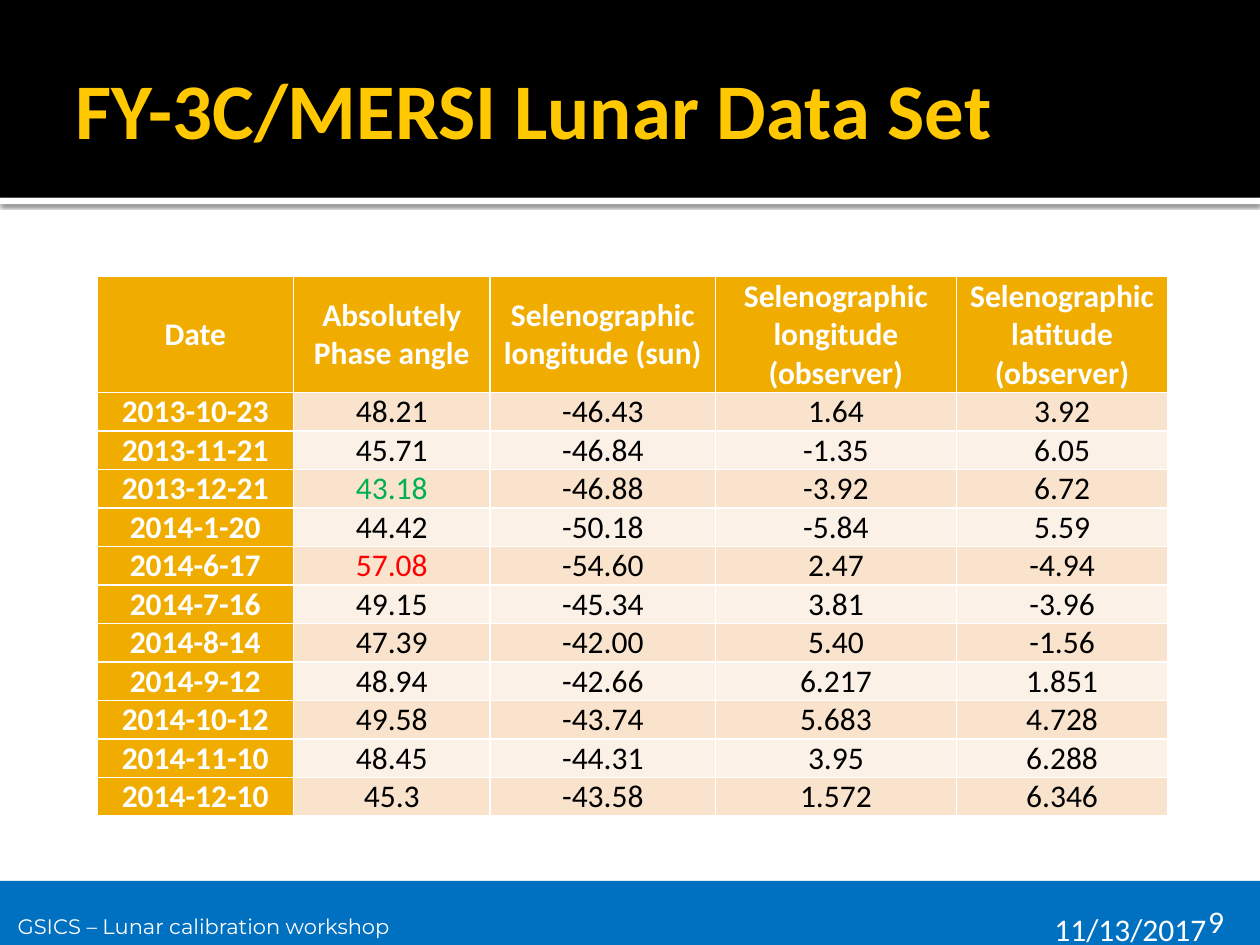
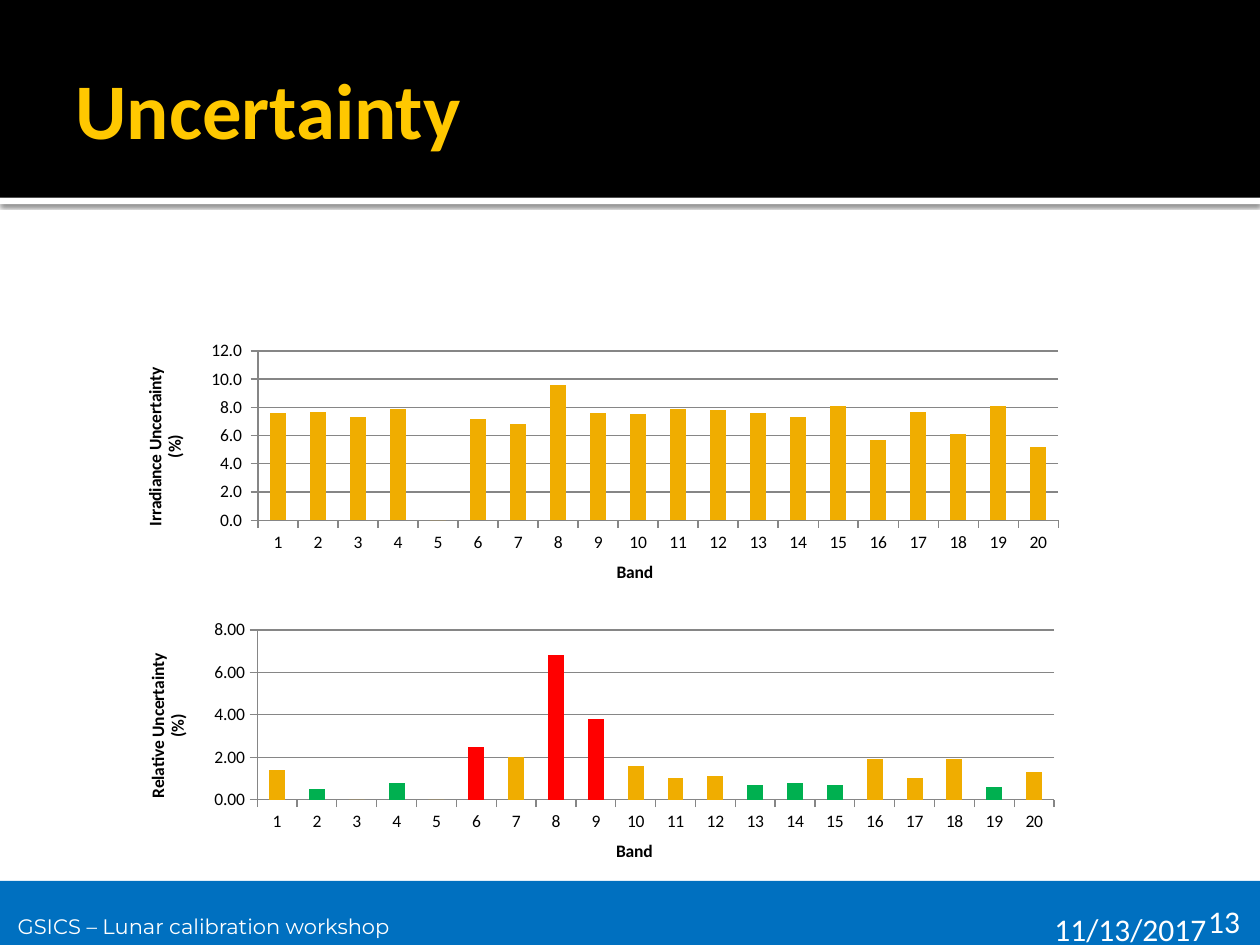
"""Build the lunar data set and uncertainty slides of a calibration workshop deck."""
from pptx import Presentation
from pptx import util as u
from pptx.chart import data as chart_data
from pptx.dml.color import RGBColor
from pptx.enum import chart as charts, shapes, text
from pptx.oxml import parse_xml
from pptx.oxml.ns import nsdecls

COLUMNS, ROWS = 100, 75
CELL = u.Inches(0.1)

BLACK = RGBColor(0x00, 0x00, 0x00)
WHITE = RGBColor(0xFF, 0xFF, 0xFF)
BLUE = RGBColor(0x00, 0x70, 0xC0)
YELLOW = RGBColor(0xFF, 0xC8, 0x00)
AMBER = RGBColor(0xF0, 0xAD, 0x00)
GREEN = RGBColor(0x00, 0xB0, 0x50)
RED = RGBColor(0xFF, 0x00, 0x00)
GREY = RGBColor(0x86, 0x86, 0x86)
BANDS = (RGBColor(0xF9, 0xE3, 0xCC), RGBColor(0xFC, 0xF1, 0xE7))

BODY_FONT = "Calibri"
FOOTER_FONT = "Montserrat"
WORKSHOP = "GSICS – Lunar calibration workshop"
DATE = "11/13/2017"

LUNAR_HEADER = ("Date", "Absolutely Phase angle", "Selenographic longitude (sun)",
                "Selenographic longitude (observer)", "Selenographic latitude (observer)")
LUNAR_ROWS = (
    ("2013-10-23", "48.21", "-46.43", "1.64", "3.92"),
    ("2013-11-21", "45.71", "-46.84", "-1.35", "6.05"),
    ("2013-12-21", "43.18", "-46.88", "-3.92", "6.72"),
    ("2014-1-20", "44.42", "-50.18", "-5.84", "5.59"),
    ("2014-6-17", "57.08", "-54.60", "2.47", "-4.94"),
    ("2014-7-16", "49.15", "-45.34", "3.81", "-3.96"),
    ("2014-8-14", "47.39", "-42.00", "5.40", "-1.56"),
    ("2014-9-12", "48.94", "-42.66", "6.217", "1.851"),
    ("2014-10-12", "49.58", "-43.74", "5.683", "4.728"),
    ("2014-11-10", "48.45", "-44.31", "3.95", "6.288"),
    ("2014-12-10", "45.3", "-43.58", "1.572", "6.346"),
)
PHASE_COLOURS = {"43.18": GREEN, "57.08": RED}

IRRADIANCE = (7.6, 7.7, 7.3, 7.9, 0, 7.2, 6.8, 9.6, 7.6, 7.5,
              7.9, 7.8, 7.6, 7.3, 8.1, 5.7, 7.7, 6.1, 8.1, 5.2)
RELATIVE = (1.4, 0.5, 0, 0.8, 0, 2.5, 2, 6.8, 3.8, 1.6,
            1, 1.1, 0.7, 0.8, 0.7, 1.9, 1, 1.9, 0.6, 1.3)


def cells(*counts):
    """Turn counts of grid cells into lengths."""
    return [u.Emu(round(count * CELL)) for count in counts]


def rate(value):
    """Choose the colour of a relative uncertainty bar."""
    if 0 < value < 1:
        return GREEN
    return RED if value > 2 else AMBER


class Slides:
    """Hold the deck style and the current page."""

    def __init__(self):
        """Start an empty deck on the grid."""
        self.deck = Presentation()
        self.deck.slide_width, self.deck.slide_height = cells(COLUMNS, ROWS)
        self.page = None

    def add_page(self, title, number):
        """Add a page with its bands, footer and title."""
        self.page = self.deck.slides.add_slide(self.deck.slide_layouts[5])
        self.add_band(15.7, 0.5, WHITE, shadow=True)
        self.add_band(0, 15.7, BLACK)
        self.add_band(69.9, 5.1, BLUE)
        self.add_text(str(number), (94.9, 71.1, 7.1, 3))
        self.add_text(DATE, (82.7, 71.7, 23.3, 3))
        self.add_text(WORKSHOP, (0, 71.6, 59.5, 3.3), 12, FOOTER_FONT, 1.2, 1.4)
        self.set_title(title)

    def set_title(self, words):
        """Place and format the title above the bands."""
        box = self.page.shapes.title
        self.page.shapes.element.append(box.element)
        box.left, box.top, box.width, box.height = cells(5, 1.7, 90, 13.7)
        frame = box.text_frame
        frame.text = words
        frame.vertical_anchor = text.MSO_ANCHOR.MIDDLE
        frame.margin_left, frame.margin_right = cells(1, 0.5)
        frame.margin_top, frame.margin_bottom = cells(0.5, 0.5)
        frame.paragraphs[0].alignment = text.PP_ALIGN.LEFT
        self.style(frame.paragraphs[0].font, 45, YELLOW, True)

    def style(self, font, size, colour, bold=False, name=BODY_FONT):
        """Apply a typeface, size, colour and weight."""
        font.name, font.size, font.bold = name, u.Pt(size), bold
        font.color.rgb = colour

    def add_band(self, top, height, colour, shadow=False):
        """Draw a full-width band."""
        band = self.page.shapes.add_shape(
            shapes.MSO_SHAPE.RECTANGLE, *cells(0, top, COLUMNS, height))
        band.fill.solid()
        band.fill.fore_color.rgb = colour
        band.line.fill.background()
        band.shadow.inherit = False
        if shadow:
            band.element.spPr.find("{*}effectLst").append(parse_xml(
                f'<a:outerShdw {nsdecls("a")} blurRad="{u.Pt(2.5)}" dist="{u.Pt(0.8)}" '
                'dir="5400000" algn="t" rotWithShape="0"><a:srgbClr val="000000">'
                '<a:alpha val="60000"/></a:srgbClr></a:outerShdw>'))

    def add_text(self, words, area, size=18, name=BODY_FONT, spacing=1.0, inset=1):
        """Write a white footer line."""
        frame = self.page.shapes.add_textbox(*cells(*area)).text_frame
        frame.word_wrap = True
        frame.margin_left, = cells(inset)
        frame.text = words
        frame.paragraphs[0].line_spacing = spacing
        self.style(frame.paragraphs[0].font, size, WHITE, name=name)

    def add_table(self, header, records, area, widths, heights):
        """Add a table with a filled header, filled first column and banded rows."""
        table = self.page.shapes.add_table(
            len(records) + 1, len(header), *cells(*area)).table
        table.first_col = True
        for column, width in zip(table.columns, cells(*widths)):
            column.width = width
        for index, values in enumerate((header, *records)):
            table.rows[index].height, = cells(heights[min(index, 1)])
            for place, value in enumerate(values):
                self.fill_cell(table.cell(index, place), value, index, place)

    def fill_cell(self, cell, value, row, column):
        """Write and colour one table cell."""
        heading = row == 0 or column == 0
        side = 0.1 if row == 0 else 0.7
        cell.margin_left, cell.margin_right = cells(side, side)
        cell.margin_top, cell.margin_bottom = cells(0.1 if row == 0 else 0, 0)
        if row == 0:
            cell.vertical_anchor = text.MSO_ANCHOR.MIDDLE
        cell.fill.solid()
        cell.fill.fore_color.rgb = AMBER if heading else BANDS[(row - 1) % 2]
        cell.text = value
        para = cell.text_frame.paragraphs[0]
        para.alignment = text.PP_ALIGN.CENTER
        colour = WHITE if heading else PHASE_COLOURS.get(value, BLACK)
        self.style(para.font, 18, colour, heading)

    def add_chart(self, title, values, area, plot, top_value, number_format, colour_of):
        """Add a column chart of one value per band."""
        source = chart_data.CategoryChartData()
        source.categories = [str(band + 1) for band in range(len(values))]
        source.add_series("Series 1", values)
        chart = self.page.shapes.add_chart(
            charts.XL_CHART_TYPE.COLUMN_CLUSTERED, *cells(*area), source).chart
        chart.has_legend = chart.has_title = False
        self.style(chart.font, 10, BLACK)
        self.format_axis(chart.category_axis, "Band")
        axis = chart.value_axis
        self.format_axis(axis, title)
        axis.axis_title.element.xpath(".//a:bodyPr")[0].set("rot", "-5400000")
        axis.minimum_scale, axis.maximum_scale, axis.major_unit = 0, top_value, 2
        axis.has_major_gridlines = True
        axis.major_gridlines.format.line.color.rgb = GREY
        axis.major_gridlines.format.line.width = u.Pt(0.75)
        axis.tick_labels.number_format = number_format
        axis.tick_labels.number_format_is_linked = False
        bars = chart.plots[0]
        bars.gap_width, bars.vary_by_categories = 150, False
        series = bars.series[0]
        series.format.fill.solid()
        series.format.fill.fore_color.rgb = AMBER
        for index, value in enumerate(values):
            if colour_of(value) != AMBER:
                fill = series.points[index].format.fill
                fill.solid()
                fill.fore_color.rgb = colour_of(value)
        self.place_plot(chart, plot)

    def format_axis(self, axis, title):
        """Title an axis and draw its line and ticks."""
        axis.has_title = True
        frame = axis.axis_title.text_frame
        frame.text = title
        for para in frame.paragraphs:
            self.style(para.font, 10, BLACK, True)
        axis.major_tick_mark = charts.XL_TICK_MARK.OUTSIDE
        axis.format.line.color.rgb = GREY
        axis.format.line.width = u.Pt(0.75)

    def place_plot(self, chart, plot):
        """Fix the inner plot area as shares of the chart."""
        area = chart.element.xpath("c:chart/c:plotArea")[0]
        for layout in area.xpath("c:layout"):
            area.remove(layout)
        modes = "".join(f'<c:{side}Mode val="edge"/>' for side in "xy")
        shares = "".join(f'<c:{side} val="{share}"/>' for side, share in zip("xywh", plot))
        area.insert(0, parse_xml(
            f'<c:layout {nsdecls("c")}><c:manualLayout><c:layoutTarget val="inner"/>'
            f'{modes}{shares}</c:manualLayout></c:layout>'))


def main():
    """Build both slides and save the deck."""
    slides = Slides()
    slides.add_page("FY-3C/MERSI Lunar Data Set", 9)
    slides.add_table(LUNAR_HEADER, LUNAR_ROWS, (7.7, 21.9, 85, 42.1),
                     (15.6, 15.6, 17.9, 19.1, 16.8), (9.1, 3))
    slides.add_page("Uncertainty", 13)
    slides.add_chart("Relative Uncertainty\n(%)", RELATIVE, (5, 48.8, 81.1, 20.1),
                     (0.19, 0.06, 0.78, 0.67), 8, "0.00", rate)
    slides.add_chart("Irradiance Uncertainty\n(%)", IRRADIANCE, (5.2, 26.6, 80.4, 21),
                     (0.19, 0.06, 0.79, 0.64), 12, r"#,##0.0_);[Red]\(#,##0.0\)",
                     lambda value: AMBER)
    slides.deck.save("out.pptx")


if __name__ == "__main__":
    main()
